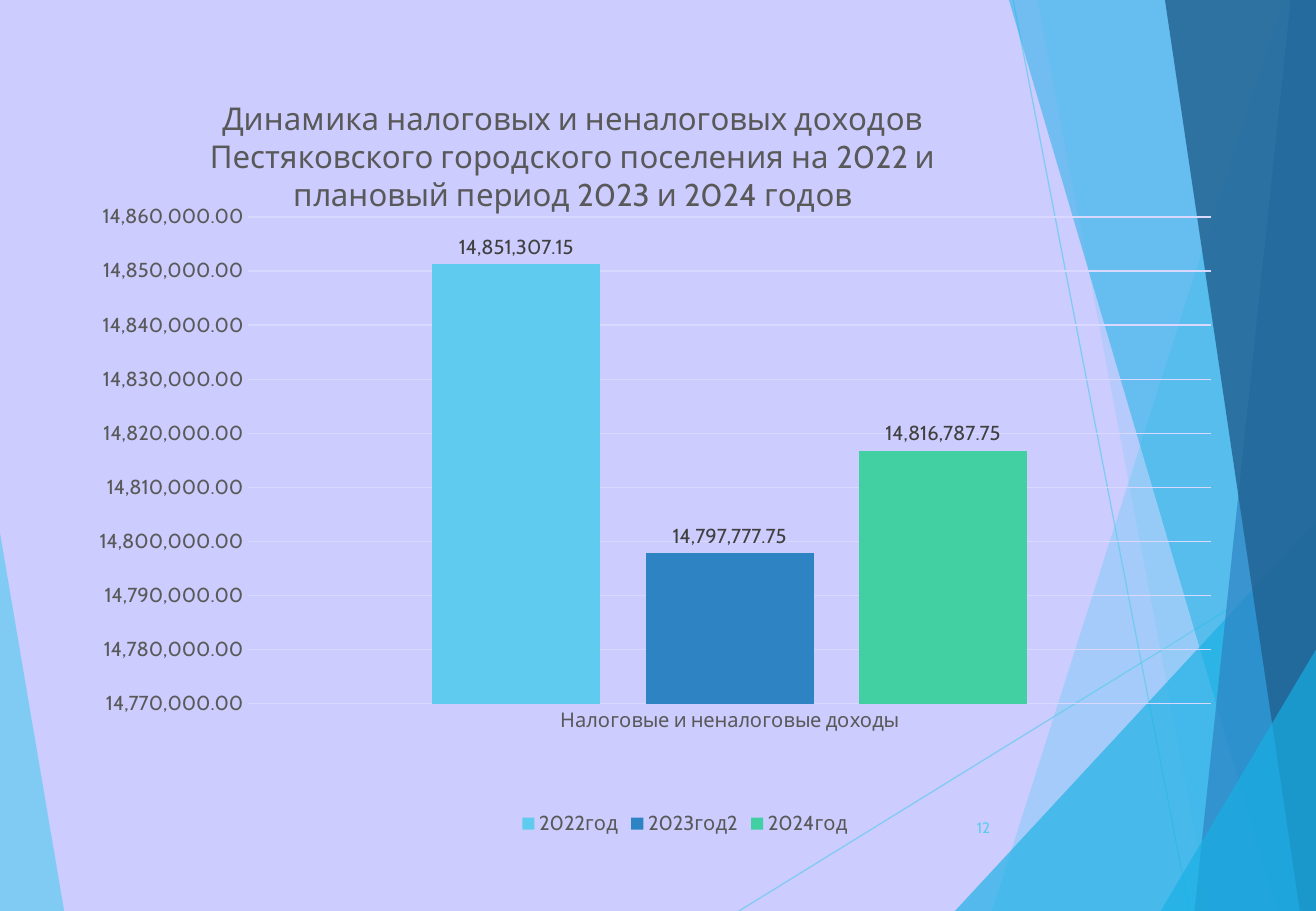
"""Build a slide with a column chart of municipal revenue over faceted panels."""
from dataclasses import dataclass
from typing import Any

from lxml import etree
from pptx import Presentation
from pptx.chart.data import CategoryChartData
from pptx.dml.color import RGBColor
from pptx.enum.chart import XL_CHART_TYPE, XL_LABEL_POSITION, XL_LEGEND_POSITION, XL_TICK_MARK
from pptx.enum.shapes import MSO_CONNECTOR
from pptx.enum.text import MSO_ANCHOR, PP_ALIGN
from pptx.oxml.ns import qn
from pptx.util import Pt

COLUMN = XL_CHART_TYPE.COLUMN_CLUSTERED
OUTSIDE_END = XL_LABEL_POSITION.OUTSIDE_END
BOTTOM = XL_LEGEND_POSITION.BOTTOM
NO_TICK = XL_TICK_MARK.NONE
STRAIGHT = MSO_CONNECTOR.STRAIGHT
MIDDLE = MSO_ANCHOR.MIDDLE
RIGHT = PP_ALIGN.RIGHT

COLORS = {
    "background": "CCCCFF", "sky": "5FCBEF", "cyan": "17B0E4", "blue": "2E83C3",
    "navy": "226292", "green": "42D0A2", "grid": "D9D9FF", "text": "595959", "label": "404040",
}
FONT = "Cabin"
NUMBER_FORMAT = "#,##0.00"
WIDTH, HEIGHT = 780, 540
TITLE = "\n".join((
    "Динамика налоговых и неналоговых доходов",
    "Пестяковского городского поселения на 2022 и",
    "плановый период 2023 и 2024 годов",
))
CATEGORY = "Налоговые и неналоговые доходы"


@dataclass(frozen=True)
class Facet:
    """A translucent polygon."""
    points: tuple[tuple[float, float], ...]
    color: str
    opacity: int


@dataclass(frozen=True)
class Ray:
    """A thin translucent line."""
    start: tuple[float, float]
    end: tuple[float, float]


@dataclass(frozen=True)
class Year:
    """One series of the chart."""
    name: str
    revenue: float
    color: str


def right_panel(top: float, bottom: float, color: str, opacity: int) -> Facet:
    """Return a full-height panel reaching the right edge."""
    return Facet(((top, 0), (bottom, HEIGHT), (WIDTH, HEIGHT), (WIDTH, 0)), color, opacity)


def right_corner(left: float, top: float) -> Facet:
    """Return a triangle in the bottom right corner."""
    return Facet(((left, HEIGHT), (WIDTH, top), (WIDTH, HEIGHT)), "cyan", 66)


DECORATION = (
    Facet(((0, 316), (38, HEIGHT), (0, HEIGHT)), "sky", 70),
    Ray((438, HEIGHT), (WIDTH, 329)),
    Ray((600.5, 0), (705, HEIGHT)),
    right_panel(760, 588, "sky", 36),
    right_panel(615, 717, "sky", 20),
    right_corner(566, 309),
    right_panel(598, 757, "cyan", 50),
    right_panel(765, 708, "blue", 70),
    right_panel(690.5, 770.5, "navy", 82),
    right_corner(688, 385),
)
YEARS = (
    Year("2022год", 14851307.15, "sky"),
    Year("2023год2", 14797777.75, "blue"),
    Year("2024год", 14816787.75, "green"),
)


def rgb(color: str) -> RGBColor:
    """Return a named color."""
    return RGBColor.from_string(COLORS[color])


def apply(target: Any, values: dict[str, Any]) -> None:
    """Set every attribute listed in values."""
    for name, value in values.items():
        setattr(target, name, value)


def style_font(font: Any, size: float, color: str) -> None:
    """Set typeface, size and color."""
    apply(font, {"name": FONT, "size": Pt(size), "bold": False})
    font.color.rgb = rgb(color)


def style_line(line: Any, color: str) -> None:
    """Give a line its color and hairline width."""
    line.color.rgb = rgb(color)
    line.width = Pt(0.75)


def set_opacity(element: Any, percent: int) -> None:
    """Make the first solid color of an element translucent."""
    color = next(element.iter(qn("a:srgbClr")))
    etree.SubElement(color, qn("a:alpha"), val=str(percent * 1000))


def draw_facet(slide: Any, facet: Facet) -> None:
    """Draw one polygon."""
    first, *others = [(Pt(x), Pt(y)) for x, y in facet.points]
    builder = slide.shapes.build_freeform(*first)
    builder.add_line_segments(others, close=True)
    shape = builder.convert_to_shape()
    shape.shadow.inherit = False
    shape.fill.solid()
    shape.fill.fore_color.rgb = rgb(facet.color)
    shape.line.fill.background()
    set_opacity(shape.fill._xPr, facet.opacity)


def draw_ray(slide: Any, ray: Ray) -> None:
    """Draw one line."""
    connector = slide.shapes.add_connector(STRAIGHT, *map(Pt, ray.start + ray.end))
    style_line(connector.line, "sky")
    properties = connector._element.spPr
    set_opacity(properties, 70)
    etree.SubElement(properties, qn("a:effectLst"))


def place(element: Any, after: str, values: dict[str, Any]) -> None:
    """Give a chart part a manual layout that follows the named child."""
    for old in element.findall(qn("c:layout")):
        element.remove(old)
    layout = etree.Element(qn("c:layout"))
    manual = etree.SubElement(layout, qn("c:manualLayout"))
    for name, value in values.items():
        etree.SubElement(manual, qn(f"c:{name}"), val=str(value))
    if after:
        element.find(qn(after)).addnext(layout)
    else:
        element.insert(0, layout)


def draw_chart(slide: Any) -> None:
    """Draw the revenue chart."""
    data = CategoryChartData(number_format=NUMBER_FORMAT)
    data.categories = [CATEGORY]
    for year in YEARS:
        data.add_series(year.name, [year.revenue])
    chart = slide.shapes.add_chart(COLUMN, Pt(59), Pt(41.8), Pt(659.5), Pt(459.4), data).chart
    style_font(chart.font, 10, "text")
    chart.has_title = True
    title = chart.chart_title
    title.include_in_layout = False
    title.text_frame.text = TITLE
    for paragraph in title.text_frame.paragraphs:
        style_font(paragraph.runs[0].font, 18.6, "text")
    chart.has_legend = True
    apply(chart.legend, {"position": BOTTOM, "include_in_layout": False})
    style_font(chart.legend.font, 12, "text")

    for axis in (chart.category_axis, chart.value_axis):
        apply(axis, {"major_tick_mark": NO_TICK, "minor_tick_mark": NO_TICK})
        style_font(axis.tick_labels.font, 12, "text")
    style_line(chart.category_axis.format.line, "grid")
    values = chart.value_axis
    apply(values, {"minimum_scale": 14770000, "maximum_scale": 14860000, "major_unit": 10000})
    apply(values.tick_labels, {"number_format": NUMBER_FORMAT, "number_format_is_linked": False})
    values.format.line.fill.background()
    style_line(values.major_gridlines.format.line, "grid")

    plot = chart.plots[0]
    apply(plot, {"gap_width": 219, "overlap": -27, "vary_by_categories": False})
    for series, year in zip(plot.series, YEARS):
        series.format.fill.solid()
        series.format.fill.fore_color.rgb = rgb(year.color)
        apply(series.data_labels, {"show_value": True, "position": OUTSIDE_END,
                                   "number_format": NUMBER_FORMAT,
                                   "number_format_is_linked": False})
        style_font(series.data_labels.font, 12, "label")

    edges = {"xMode": "edge", "yMode": "edge"}
    place(title._element, "c:tx", edges | {"x": 0.09, "y": 0.03})
    place(chart.legend._element, "c:legendPos", edges | {"x": 0.37, "y": 0.95})
    plot_area = chart._chartSpace.chart.plotArea
    place(plot_area, "", {"layoutTarget": "inner"} | edges
          | {"x": 0.128, "y": 0.189, "w": 0.871, "h": 0.628})


def draw_page_number(slide: Any) -> None:
    """Write the page number."""
    frame = slide.shapes.add_textbox(Pt(550), Pt(476), Pt(44), Pt(28.8)).text_frame
    apply(frame, {"word_wrap": True, "vertical_anchor": MIDDLE, "text": "12"})
    paragraph = frame.paragraphs[0]
    paragraph.alignment = RIGHT
    style_font(paragraph.runs[0].font, 9, "sky")


def main() -> None:
    """Build and save the presentation."""
    presentation = Presentation()
    apply(presentation, {"slide_width": Pt(WIDTH), "slide_height": Pt(HEIGHT)})
    slide = presentation.slides.add_slide(presentation.slide_layouts[6])
    slide.background.fill.solid()
    slide.background.fill.fore_color.rgb = rgb("background")
    for item in DECORATION:
        if isinstance(item, Facet):
            draw_facet(slide, item)
        else:
            draw_ray(slide, item)
    draw_chart(slide)
    draw_page_number(slide)
    presentation.save("out.pptx")


if __name__ == "__main__":
    main()
